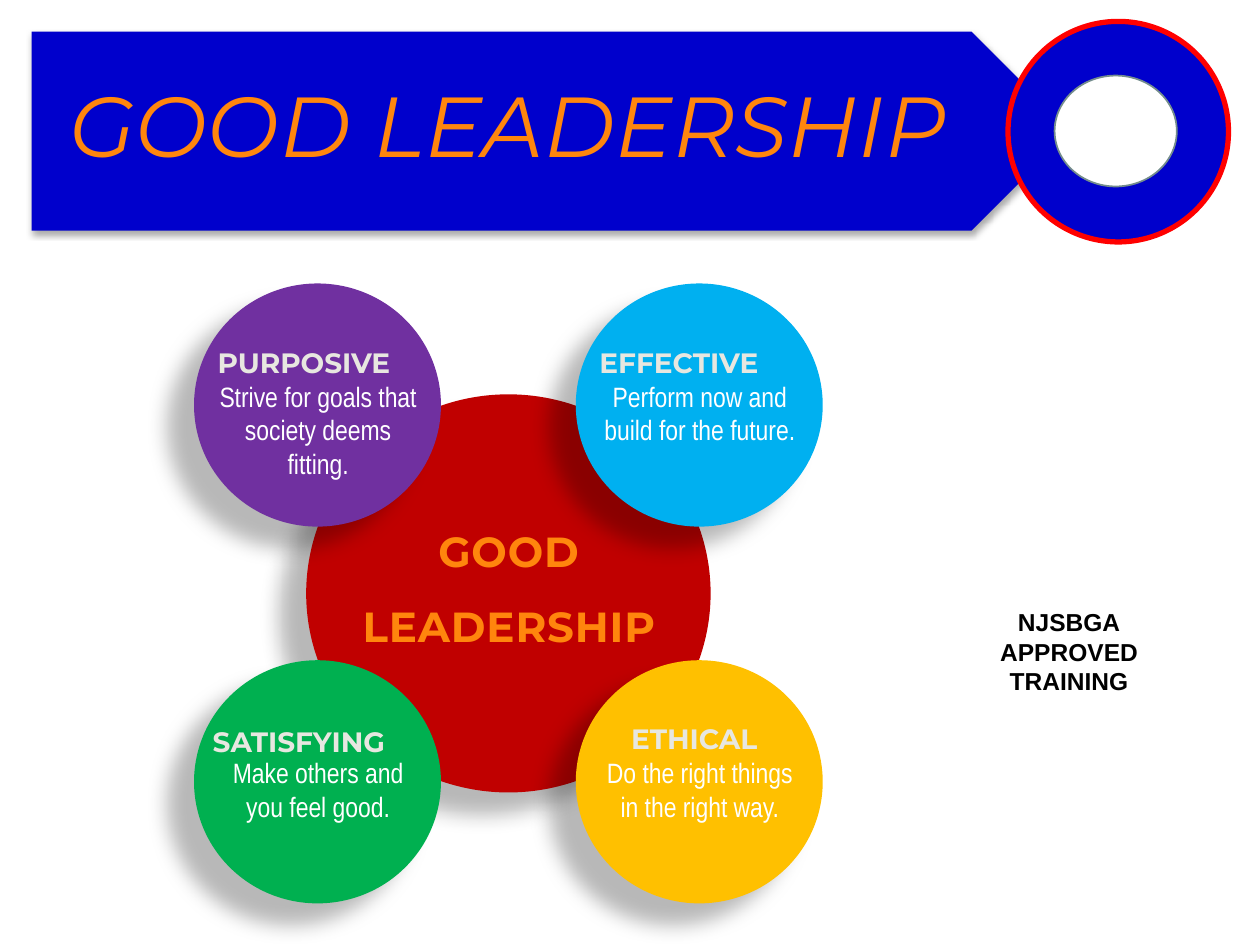
import pptx
import pptx.dml.color
import pptx.enum.shapes
import pptx.enum.text
import pptx.oxml
import pptx.oxml.ns
import pptx.util

Inches = pptx.util.Inches
Pt = pptx.util.Pt
RGBColor = pptx.dml.color.RGBColor
SHAPE = pptx.enum.shapes.MSO_SHAPE
ALIGN = pptx.enum.text.PP_ALIGN

BLUE = RGBColor(0x00, 0x00, 0xCC)
RED = RGBColor(0xFF, 0x00, 0x00)
ORANGE = RGBColor(0xFF, 0x86, 0x0D)
DARK_RED = RGBColor(0xC0, 0x00, 0x00)
PURPLE = RGBColor(0x70, 0x30, 0xA0)
SKY = RGBColor(0x00, 0xB0, 0xF0)
GOLD = RGBColor(0xFF, 0xC0, 0x00)
GREEN = RGBColor(0x00, 0xB0, 0x50)
PALE = RGBColor(0xE7, 0xE7, 0xE0)
GREY = RGBColor(0x74, 0x8D, 0x8D)
WHITE = RGBColor(0xFF, 0xFF, 0xFF)
BLACK = RGBColor(0x00, 0x00, 0x00)

# Shadows: opacity in percent, blur and distance in points, angle in degrees
BANNER_SHADOW = (32, 3.5, 2.2, 90)
CIRCLE_SHADOW = (28, 11.8, 19.7, 141)


def add_shadow(shape, opacity, blur, distance, angle):
    effects = shape.element.spPr.find(pptx.oxml.ns.qn("a:effectLst"))
    effects.append(pptx.oxml.parse_xml(
        f'<a:outerShdw {pptx.oxml.ns.nsdecls("a")} blurRad="{Pt(blur)}" '
        f'dist="{Pt(distance)}" dir="{angle * 60000}" algn="ctr" rotWithShape="0">'
        f'<a:srgbClr val="000000"><a:alpha val="{opacity * 1000}"/></a:srgbClr>'
        '</a:outerShdw>'))


def add_filled(slide, preset, box, fill, line=None, line_width=1, shadow=None):
    shape = slide.shapes.add_shape(preset, *map(Inches, box))
    shape.shadow.inherit = False
    shape.fill.solid()
    shape.fill.fore_color.rgb = fill
    if line is None:
        shape.line.fill.background()
    else:
        shape.line.color.rgb = line
        shape.line.width = Pt(line_width)
    if shadow:
        add_shadow(shape, *shadow)
    return shape


def format_text(text_frame, size, font_name, color, align, bold=False,
                italic=False, line_spacing=None, tracking=None):
    for paragraph in text_frame.paragraphs:
        paragraph.alignment = align
        if line_spacing:
            paragraph.line_spacing = line_spacing
        for run in paragraph.runs:
            run.font.size = Pt(size)
            run.font.name = font_name
            run.font.bold = bold
            run.font.italic = italic
            run.font.color.rgb = color
            if tracking:
                run.font._element.set("spc", str(int(tracking * 100)))


def add_text(slide, box, text, size, font_name, color, align=ALIGN.CENTER, **style):
    text_frame = slide.shapes.add_textbox(*map(Inches, box)).text_frame
    text_frame.word_wrap = True
    text_frame.text = text
    format_text(text_frame, size, font_name, color, align, **style)


def add_banner(slide, left, top):
    # Arrow bar and ring
    add_filled(slide, SHAPE.PENTAGON, (left, top, 8.25, 1.58), BLUE,
               shadow=BANNER_SHADOW)
    add_filled(slide, SHAPE.OVAL, (left + 7.75, top - 0.08, 1.75, 1.75), BLUE, RED, 3)
    add_filled(slide, SHAPE.OVAL, (left + 8.08, top + 0.25, 1.08, 1.08), BLUE, BLUE, 4.5)
    add_filled(slide, SHAPE.OVAL, (left + 8.12, top + 0.35, 0.97, 0.88), WHITE, GREY)

    # Title, brought in front of the bar
    title = slide.shapes.title
    title.left, title.top = Inches(left + 0.08), Inches(top + 0.15)
    title.width, title.height = Inches(7.41), Inches(1.27)
    title.text_frame.text = "GOOD LEADERSHIP"
    title.text_frame.word_wrap = True
    title.text_frame.auto_size = pptx.enum.text.MSO_AUTO_SIZE.NONE
    title.text_frame.vertical_anchor = pptx.enum.text.MSO_ANCHOR.MIDDLE
    format_text(title.text_frame, 48.6, "Montserrat", ORANGE, ALIGN.CENTER,
                italic=True, line_spacing=0.9, tracking=0.5)
    title.element.getparent().append(title.element)


def add_quality(slide, left, top, fill, heading, body, align=ALIGN.LEFT,
                heading_offset=(0.09, 0.44)):
    add_filled(slide, SHAPE.OVAL, (left, top, 1.96, 1.93), fill, shadow=CIRCLE_SHADOW)
    across, down = heading_offset
    add_text(slide, (left + across, top + down, 1.7, 0.39), heading, 16,
             "Montserrat", PALE, align, bold=True)
    add_text(slide, (left + 0.09, top + 0.71, 1.79, 0.96), body, 16,
             "Arial Narrow", WHITE)


def add_diagram(slide, left, top):
    # Central circle
    add_filled(slide, SHAPE.OVAL, (left + 0.89, top + 0.88, 3.21, 3.16), DARK_RED,
               shadow=CIRCLE_SHADOW)
    add_text(slide, (left + 0.98, top + 1.67, 3.04, 1.4), "GOOD LEADERSHIP", 24,
             "Montserrat", ORANGE, bold=True, line_spacing=1.5, tracking=0.5)

    # Four qualities around it
    right, bottom = left + 3.03, top + 2.99
    add_quality(slide, left, top, PURPLE, "PURPOSIVE",
                "Strive for goals that society deems fitting.")
    add_quality(slide, right, top, SKY, "EFFECTIVE",
                "Perform now and build for the future.")
    add_quality(slide, right, bottom, GOLD, "ETHICAL",
                "Do the right things in the right way.", ALIGN.CENTER)
    add_quality(slide, left, bottom, GREEN, "SATISFYING",
                "Make others and you feel good.", heading_offset=(0.05, 0.46))


def main():
    presentation = pptx.Presentation()
    presentation.slide_width = Inches(10)
    presentation.slide_height = Inches(7.5)
    slide = presentation.slides.add_slide(presentation.slide_layouts[5])
    add_banner(slide, 0.25, 0.25)
    add_text(slide, (7.83, 4.77, 1.31, 0.81), "NJSBGA\nAPPROVED\nTRAINING", 14,
             "Arial", BLACK, bold=True)
    add_diagram(slide, 1.54, 2.25)
    presentation.save("out.pptx")


if __name__ == "__main__":
    main()
